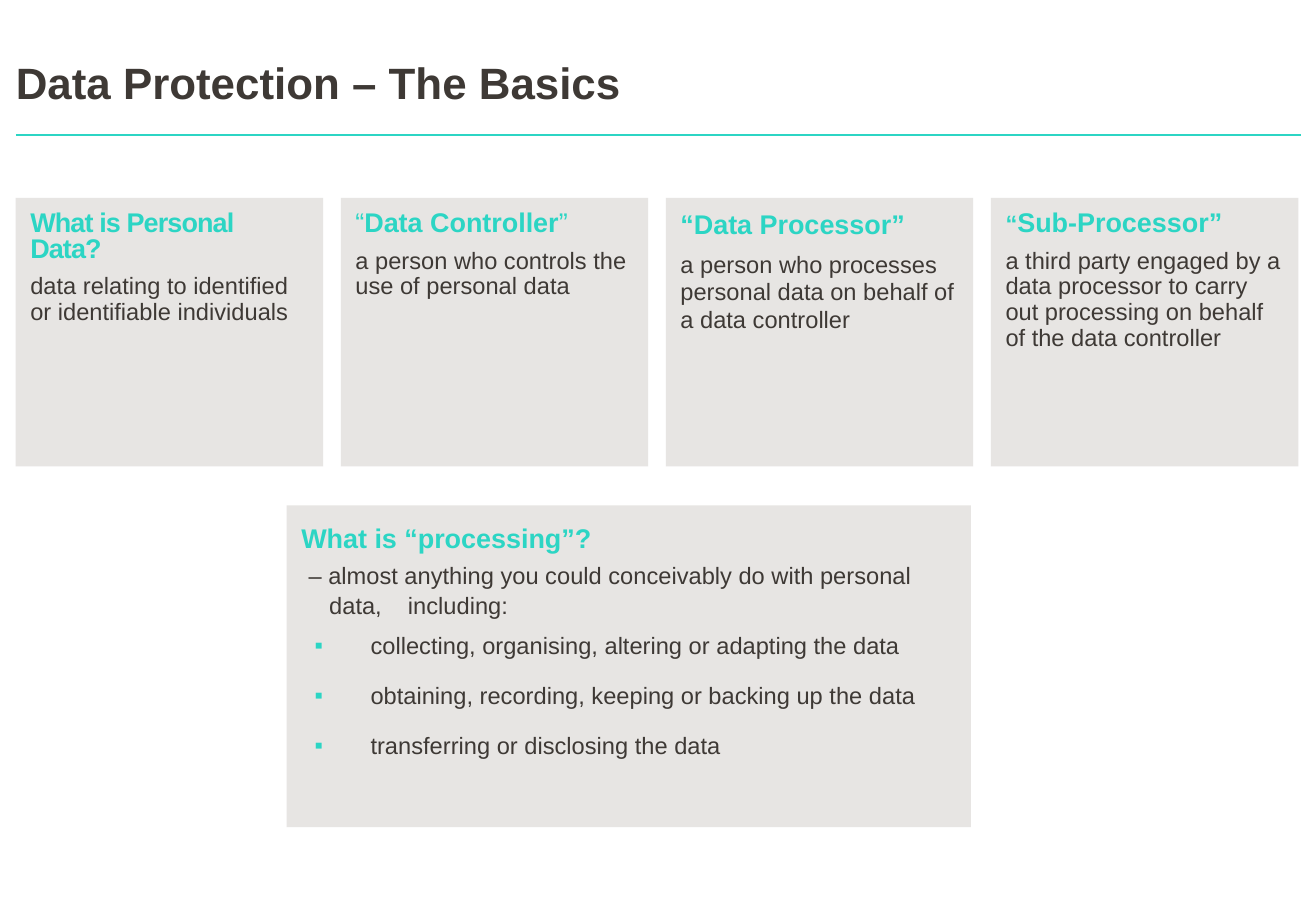
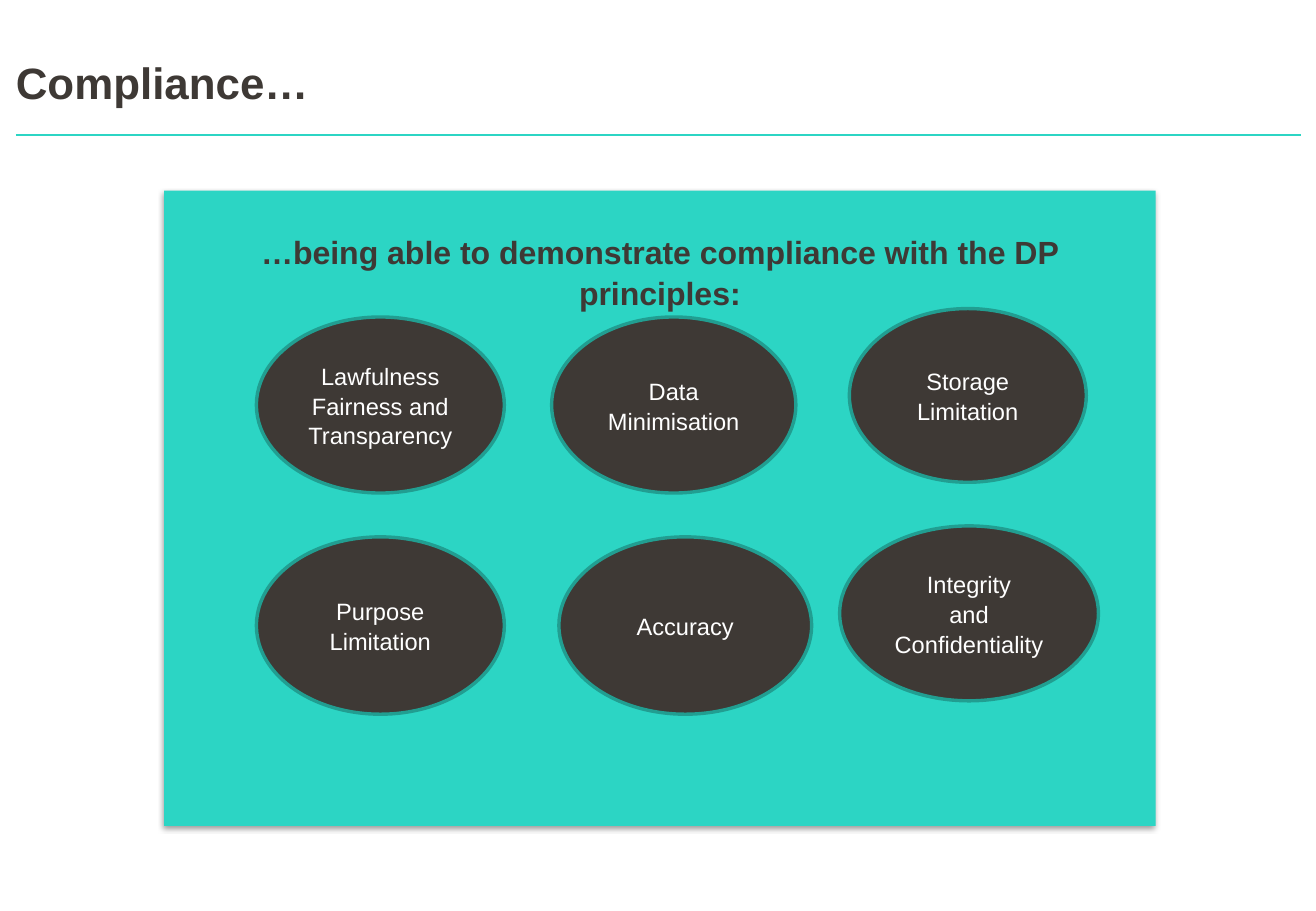
"""Build two slides on data protection basics and compliance."""
from dataclasses import dataclass

from lxml import etree
from pptx import Presentation, util as u
from pptx.dml.color import RGBColor
from pptx.enum import shapes, text
from pptx.oxml import ns

WIDTH, HEIGHT = u.Inches(10.83), u.Inches(7.5)
FONT = "Arial"
TEAL, DARK, GREY, EDGE, WHITE = "2CD5C4", "3E3935", "E7E5E3", "219E91", "FFFFFF"
LINE_SPACING = 1.05
MARGIN = 1.2


@dataclass(frozen=True)
class Frame:
    """Place on the slide in percent of its width and height."""
    left: float
    top: float
    width: float
    height: float

    def box(self) -> tuple[int, int, int, int]:
        """Return the place as left, top, width and height lengths."""
        return (int(WIDTH * self.left / 100), int(HEIGHT * self.top / 100),
                int(WIDTH * self.width / 100), int(HEIGHT * self.height / 100))


@dataclass(frozen=True)
class Span:
    """Text in one format."""
    words: str
    size: float = 14
    color: str = DARK
    bold: bool = False
    tracking: float = 0


@dataclass(frozen=True)
class Para:
    """Paragraph made of spans."""
    spans: tuple[Span, ...]
    align: text.PP_ALIGN = text.PP_ALIGN.LEFT
    leading: float | u.Length = LINE_SPACING
    before: float = 0
    after: float = 0
    margin: float = 0
    indent: float = 0
    bullet: str = ""


@dataclass(frozen=True)
class Card:
    """Definition card with a heading and a body."""
    heading: tuple[Span, ...]
    body: str
    leading: float = 15.2


@dataclass(frozen=True)
class Principle:
    """Principle shown in an ellipse."""
    frame: Frame
    lines: tuple[str, ...]


RULE = Frame(MARGIN, 14.8, 97.69, 0)
TITLE = Frame(MARGIN, 5.33, 66.94, 7.33)
CARD = Frame(MARGIN, 21.73, 23.36, 29.47)
CARD_STEP = 24.7
PROCESSING = Frame(21.79, 55.47, 51.99, 35.33)
PANEL = Frame(12.47, 20.93, 75.35, 69.73)
CARD_INSETS = (0.12, 0.12, 0.12, 0.12)
OVAL_INSETS = (0.12, 0.06, 0.12, 0.06)
PANEL_INSETS = (0.12, 0.33, 0.12, 0.06)


def head(words: str, size: float = 16, bold: bool = True, tracking: float = 0) -> Span:
    """Return a teal heading span."""
    return Span(words, size, TEAL, bold, tracking)


CARDS = (
    Card((head("What is Personal Data?", tracking=-0.5),),
         "data relating to identified or identifiable individuals"),
    Card((head("“", bold=False), head("Data Controller"), head("”", bold=False)),
         "a person who controls the use of personal data"),
    Card((head("“Data Processor”"),),
         "a person who processes personal data on behalf of a data controller", 16.4),
    Card((head("“", 14), head("Sub-Processor”")),
         "a third party engaged by a data processor to carry out processing "
         "on behalf of the data controller"),
)
ACTIVITIES = (
    "collecting, organising, altering or adapting the data",
    "obtaining, recording, keeping or backing up the data",
    "transferring or disclosing the data",
)
PRINCIPLES = (
    Principle(Frame(19.48, 34.8, 18.84, 19.33), ("Lawfulness", "Fairness and Transparency")),
    Principle(Frame(41.92, 34.8, 18.56, 19.33), ("Data", "Minimisation")),
    Principle(Frame(64.54, 33.87, 18.01, 19.07), ("Storage", "Limitation")),
    Principle(Frame(19.48, 58.93, 18.84, 19.47), ("Purpose", "Limitation")),
    Principle(Frame(42.47, 58.93, 19.21, 19.47), ("Accuracy",)),
    Principle(Frame(63.8, 57.73, 19.67, 19.2), ("Integrity", "and", "Confidentiality")),
)


def color(value: str) -> RGBColor:
    """Turn a hex string into a colour."""
    return RGBColor.from_string(value)


def child(parent, tag: str, **attributes: str):
    """Append a DrawingML element."""
    return etree.SubElement(parent, ns.qn(f"a:{tag}"), attributes)


def write(frame, paras: tuple[Para, ...], insets=(0, 0, 0, 0),
          anchor=text.MSO_ANCHOR.TOP) -> None:
    """Fill a text frame with paragraphs."""
    frame.word_wrap = True
    frame.auto_size = text.MSO_AUTO_SIZE.NONE
    frame.vertical_anchor = anchor
    (frame.margin_left, frame.margin_top,
     frame.margin_right, frame.margin_bottom) = map(u.Inches, insets)
    for index, item in enumerate(paras):
        para = frame.add_paragraph() if index else frame.paragraphs[0]
        properties = para._p.get_or_add_pPr()
        properties.set("marL", str(u.Inches(item.margin)))
        properties.set("indent", str(u.Inches(item.indent)))
        if item.bullet:
            child(child(properties, "buClr"), "srgbClr", val=TEAL)
            child(properties, "buFont", typeface=FONT)
            child(properties, "buChar", char=item.bullet)
        para.alignment = item.align
        para.line_spacing = item.leading
        para.space_before, para.space_after = u.Pt(item.before), u.Pt(item.after)
        for part in item.spans:
            span = para.add_run()
            span.text = part.words
            span.font.name = FONT
            span.font.size = u.Pt(part.size)
            span.font.bold = part.bold
            span.font.color.rgb = color(part.color)
            if part.tracking:
                span.font._element.set("spc", str(round(part.tracking * 100)))


def add_box(page, kind, frame: Frame, fill: str, edge: str = ""):
    """Add a filled shape with an optional outline."""
    box = page.shapes.add_shape(kind, *frame.box())
    box.shadow.inherit = False
    box.fill.solid()
    box.fill.fore_color.rgb = color(fill)
    if edge:
        box.line.color.rgb = color(edge)
        box.line.width = u.Pt(2)
    else:
        box.line.fill.background()
    return box


def add_page(deck, title: str):
    """Add a slide with the shared title and rule."""
    page = deck.slides.add_slide(deck.slide_layouts[5])
    left, top, width, _ = RULE.box()
    rule = page.shapes.add_connector(
        shapes.MSO_CONNECTOR.STRAIGHT, left, top, left + width, top)
    rule.line.color.rgb = color(TEAL)
    rule.line.width = u.Pt(1)
    child(rule._element.spPr, "effectLst")
    holder = page.shapes.title
    holder.left, holder.top, holder.width, holder.height = TITLE.box()
    write(holder.text_frame, (Para((Span(title, 26, DARK, True),), leading=1.0),),
          anchor=text.MSO_ANCHOR.MIDDLE)
    return page


def add_basics(deck) -> None:
    """Add the slide of definitions."""
    page = add_page(deck, "Data Protection – The Basics")
    rectangle = shapes.MSO_SHAPE.RECTANGLE
    for column, card in enumerate(CARDS):
        place = Frame(CARD.left + column * CARD_STEP, CARD.top, CARD.width, CARD.height)
        leading = u.Pt(card.leading)
        box = add_box(page, rectangle, place, GREY)
        write(box.text_frame, (Para(card.heading, leading=leading, after=6),
                               Para((Span(card.body),), leading=leading)), CARD_INSETS)
    intro = (Span("– almost anything you could conceivably do with personal data,"),
             Span(" ", tracking=11.5), Span("including:"))
    activities = tuple(Para((Span(words),), before=6, after=6, margin=0.57,
                            indent=-0.46, bullet="▪") for words in ACTIVITIES)
    box = add_box(page, rectangle, PROCESSING, GREY)
    write(box.text_frame, (Para((head("What is “processing”?"),), after=3.5),
                           Para(intro, margin=0.23, indent=-0.17), *activities), CARD_INSETS)


def add_compliance(deck) -> None:
    """Add the slide of principles."""
    page = add_page(deck, "Compliance…")
    center = text.PP_ALIGN.CENTER
    panel = add_box(page, shapes.MSO_SHAPE.RECTANGLE, PANEL, TEAL)
    effects = panel._element.spPr.find(ns.qn("a:effectLst"))
    shadow = child(effects, "outerShdw", blurRad=str(u.Pt(3.1)), dist=str(u.Pt(1.6)),
                   dir="5400000", rotWithShape="0")
    child(child(shadow, "srgbClr", val="000000"), "alpha", val="38000")
    heading = Span("…being able to demonstrate compliance with the DP principles:",
                   19, DARK, True)
    write(panel.text_frame, (Para((heading,), center),), PANEL_INSETS)
    for principle in PRINCIPLES:
        oval = add_box(page, shapes.MSO_SHAPE.OVAL, principle.frame, DARK, EDGE)
        write(oval.text_frame,
              tuple(Para((Span(line, color=WHITE),), center) for line in principle.lines),
              OVAL_INSETS, text.MSO_ANCHOR.MIDDLE)


def main() -> None:
    """Build and save the deck."""
    deck = Presentation()
    deck.slide_width, deck.slide_height = WIDTH, HEIGHT
    add_basics(deck)
    add_compliance(deck)
    deck.save("out.pptx")


if __name__ == "__main__":
    main()
